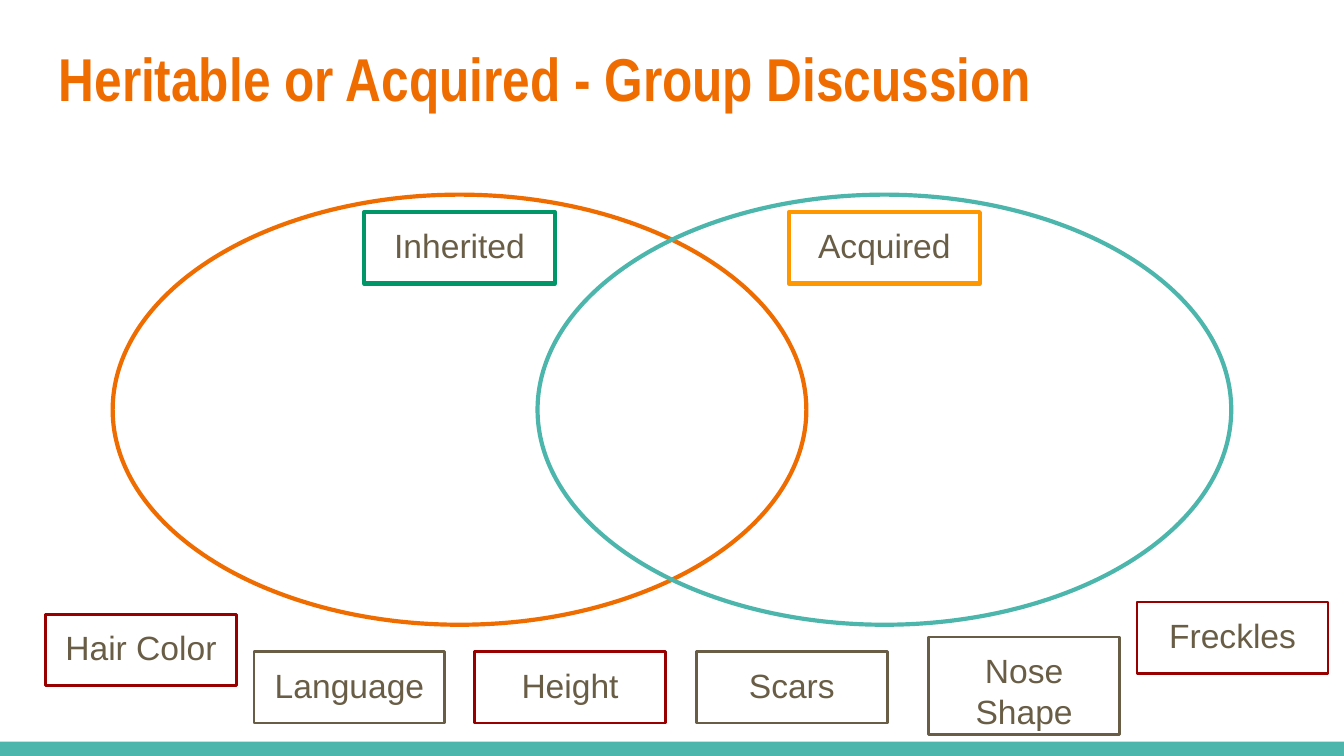
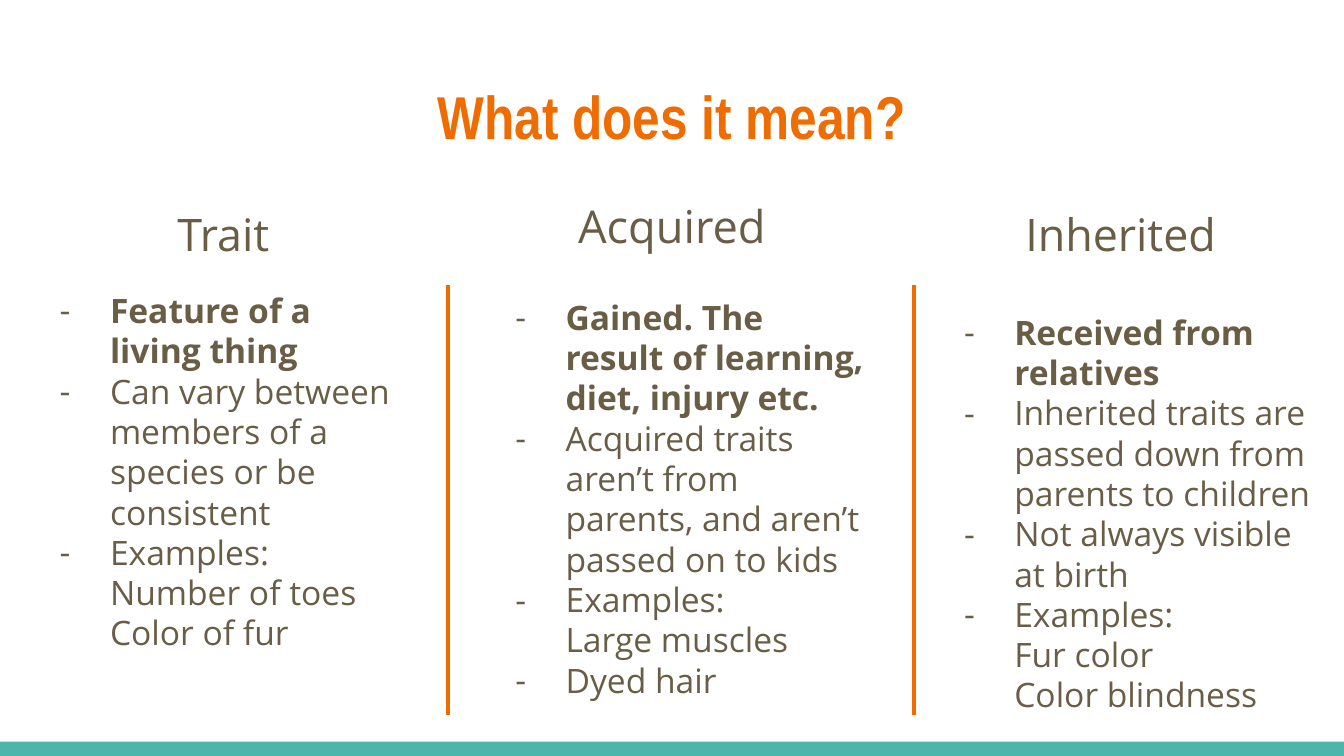
from dataclasses import dataclass

from lxml import etree
from pptx import Presentation
from pptx.dml.color import RGBColor
from pptx.enum.shapes import MSO_CONNECTOR, MSO_SHAPE
from pptx.enum.text import MSO_ANCHOR, PP_ALIGN
from pptx.oxml.ns import qn
from pptx.shapes.autoshape import Shape
from pptx.slide import Slide
from pptx.text.text import TextFrame, _Paragraph
from pptx.util import Cm, Pt

LEFT, CENTER = PP_ALIGN.LEFT, PP_ALIGN.CENTER
TOP = MSO_ANCHOR.TOP
RECTANGLE, OVAL = MSO_SHAPE.RECTANGLE, MSO_SHAPE.OVAL
STRAIGHT = MSO_CONNECTOR.STRAIGHT

ORANGE = RGBColor(0xEF, 0x6C, 0x00)
TEAL = RGBColor(0x4D, 0xB6, 0xAC)
BROWN = RGBColor(0x69, 0x5D, 0x46)
RED = RGBColor(0x98, 0x00, 0x00)
GREEN = RGBColor(0x00, 0x96, 0x68)
AMBER = RGBColor(0xFF, 0x98, 0x00)

TITLE_FONT, LABEL_FONT, BODY_FONT = "Arial Narrow", "Arial", "Open Sans"
SLIDE_WIDTH, SLIDE_HEIGHT = 25.4, 14.29
BAND_HEIGHT = 0.27
INSET = 0.25
THICK, THIN = 2.25, 1.5
TRAIT_ROW = 12.32


@dataclass(frozen=True)
class Box:
    """A rectangle on the slide, in centimetres."""

    left: float
    top: float
    width: float
    height: float

    def lengths(self) -> tuple[Cm, Cm, Cm, Cm]:
        """Give the four measures as lengths."""
        return Cm(self.left), Cm(self.top), Cm(self.width), Cm(self.height)


@dataclass(frozen=True)
class TextStyle:
    """The look of a paragraph."""

    font: str
    size: float
    color: RGBColor = BROWN
    bold: bool = False
    align: PP_ALIGN = LEFT
    spacing: float = 1.0
    space_after: float = 0


@dataclass(frozen=True)
class Label:
    """A framed word to sort into the diagram."""

    text: str
    left: float
    top: float
    outline: RGBColor
    weight: float = THIN
    height: float = 1.35


@dataclass(frozen=True)
class Definition:
    """A term with its heading and its explanation."""

    term: str
    heading: Box
    heading_style: TextStyle
    body: Box
    points: tuple[str, ...]


LABEL_STYLE = TextStyle(LABEL_FONT, 18, align=CENTER)
HEADING_STYLE = TextStyle(BODY_FONT, 24, align=CENTER, spacing=1.15, space_after=12)
TIGHT_HEADING_STYLE = TextStyle(BODY_FONT, 24.2, align=CENTER, spacing=0.95, space_after=12)
MEANING_STYLE = TextStyle(BODY_FONT, 18, bold=True)
POINT_STYLE = TextStyle(BODY_FONT, 18)

CIRCLES = ((2.13, ORANGE), (10.16, TEAL))
LABELS = (
    Label("Hair Color", 0.86, 11.61, RED),
    Label("Language", 4.8, TRAIT_ROW, BROWN),
    Label("Height", 8.97, TRAIT_ROW, RED),
    Label("Scars", 13.16, TRAIT_ROW, BROWN),
    Label("Nose Shape", 17.55, 12.04, BROWN, height=1.85),
    Label("Freckles", 21.49, 11.38, RED),
    Label("Inherited", 6.88, 4.01, GREEN, THICK),
    Label("Acquired", 14.91, 4.01, AMBER, THICK),
)
DIVIDERS = (8.46, 17.27)
DEFINITIONS = (
    Definition(
        "Trait", Box(0.69, 3.5, 7.06, 1.52), HEADING_STYLE, Box(0.56, 5.23, 7.39, 7.49),
        (
            "Feature of a living thing",
            "Can vary between members of a species or be consistent",
            "Examples: Number of toes\nColor of fur",
        ),
    ),
    Definition(
        "Acquired", Box(9.17, 3.58, 7.06, 1.4), TIGHT_HEADING_STYLE, Box(9.17, 5.36, 7.52, 7.49),
        (
            "Gained. The result of learning, diet, injury etc.",
            "Acquired traits aren’t from parents, and aren’t passed on to kids",
            "Examples:\nLarge muscles",
            "Dyed hair",
        ),
    ),
    Definition(
        "Inherited", Box(17.65, 3.5, 7.06, 1.52), HEADING_STYLE, Box(17.65, 5.64, 7.52, 7.49),
        (
            "Received from relatives",
            "Inherited traits are passed down from parents to children",
            "Not always visible at birth",
            "Examples:\nFur color\nColor blindness",
        ),
    ),
)


def prepare_frame(frame: TextFrame) -> None:
    """Set wrapping, anchor and insets."""
    frame.word_wrap = True
    frame.vertical_anchor = TOP
    frame.margin_left = frame.margin_right = Cm(INSET)
    frame.margin_top = frame.margin_bottom = Cm(INSET)


def write(paragraph: _Paragraph, text: str, style: TextStyle) -> None:
    """Fill a paragraph and format its runs."""
    paragraph.text = text
    paragraph.alignment = style.align
    paragraph.line_spacing = style.spacing
    paragraph.space_after = Pt(style.space_after)
    for run in paragraph.runs:
        run.font.name = style.font
        run.font.size = Pt(style.size)
        run.font.bold = style.bold
        run.font.color.rgb = style.color


def add_text(slide: Slide, box: Box, text: str, style: TextStyle) -> None:
    """Add a text box with one paragraph."""
    frame = slide.shapes.add_textbox(*box.lengths()).text_frame
    prepare_frame(frame)
    write(frame.paragraphs[0], text, style)


def add_outline(slide: Slide, kind: MSO_SHAPE, box: Box, color: RGBColor, weight: float) -> Shape:
    """Add an unfilled shape with a coloured line."""
    shape = slide.shapes.add_shape(kind, *box.lengths())
    shape.shadow.inherit = False
    shape.fill.background()
    shape.line.color.rgb = color
    shape.line.width = Pt(weight)
    return shape


def add_label(slide: Slide, label: Label) -> None:
    """Add a framed word."""
    box = Box(label.left, label.top, 3.61, label.height)
    frame = add_outline(slide, RECTANGLE, box, label.outline, label.weight).text_frame
    prepare_frame(frame)
    write(frame.paragraphs[0], label.text, LABEL_STYLE)


def add_divider(slide: Slide, left: float) -> None:
    """Add a vertical line between two definitions."""
    divider = slide.shapes.add_connector(STRAIGHT, Cm(left), Cm(5.38), Cm(left), Cm(13.51))
    divider.line.color.rgb = ORANGE
    divider.line.width = Pt(THICK)
    etree.SubElement(divider._element.spPr, qn("a:effectLst"))


def add_dash(paragraph: _Paragraph) -> None:
    """Give a paragraph a hanging dash."""
    properties = paragraph._p.get_or_add_pPr()
    properties.set("marL", str(Cm(1.27)))
    properties.set("indent", str(Cm(-0.95)))
    bullet_color = etree.SubElement(properties, qn("a:buClr"))
    etree.SubElement(bullet_color, qn("a:srgbClr")).set("val", str(BROWN))
    etree.SubElement(properties, qn("a:buFont")).set("typeface", BODY_FONT)
    etree.SubElement(properties, qn("a:buChar")).set("char", "-")


def add_definition(slide: Slide, definition: Definition) -> None:
    """Add a heading and its dashed points, the first one bold."""
    add_text(slide, definition.heading, definition.term, definition.heading_style)
    frame = slide.shapes.add_textbox(*definition.body.lengths()).text_frame
    prepare_frame(frame)
    for index, point in enumerate(definition.points):
        paragraph = frame.add_paragraph() if index else frame.paragraphs[0]
        write(paragraph, point, POINT_STYLE if index else MEANING_STYLE)
        add_dash(paragraph)


def add_titled_slide(
    deck: Presentation, title: str, top: float, height: float, align: PP_ALIGN
) -> Slide:
    """Add a slide with the bottom band and a title."""
    slide = deck.slides.add_slide(deck.slide_layouts[6])
    band_box = Box(0, SLIDE_HEIGHT - BAND_HEIGHT, SLIDE_WIDTH, BAND_HEIGHT)
    band = slide.shapes.add_shape(RECTANGLE, *band_box.lengths())
    band.shadow.inherit = False
    band.fill.solid()
    band.fill.fore_color.rgb = TEAL
    band.line.fill.background()
    style = TextStyle(TITLE_FONT, 32.4, ORANGE, bold=True, align=align)
    add_text(slide, Box(0.86, top, 23.67, height), title, style)
    return slide


def add_discussion_slide(deck: Presentation) -> None:
    """Add the Venn diagram with the traits to sort."""
    slide = add_titled_slide(deck, "Heritable or Acquired - Group Discussion", 0.53, 1.6, LEFT)
    for left, color in CIRCLES:
        add_outline(slide, OVAL, Box(left, 3.68, 13.11, 8.13), color, THICK)
    for label in LABELS:
        add_label(slide, label)


def add_meaning_slide(deck: Presentation) -> None:
    """Add the three definitions side by side."""
    slide = add_titled_slide(deck, "What does it mean?", 1.24, 1.96, CENTER)
    for left in DIVIDERS:
        add_divider(slide, left)
    for definition in DEFINITIONS:
        add_definition(slide, definition)


def main() -> None:
    """Build and save the deck."""
    deck = Presentation()
    deck.slide_width, deck.slide_height = Cm(SLIDE_WIDTH), Cm(SLIDE_HEIGHT)
    add_discussion_slide(deck)
    add_meaning_slide(deck)
    deck.save("out.pptx")


if __name__ == "__main__":
    main()
